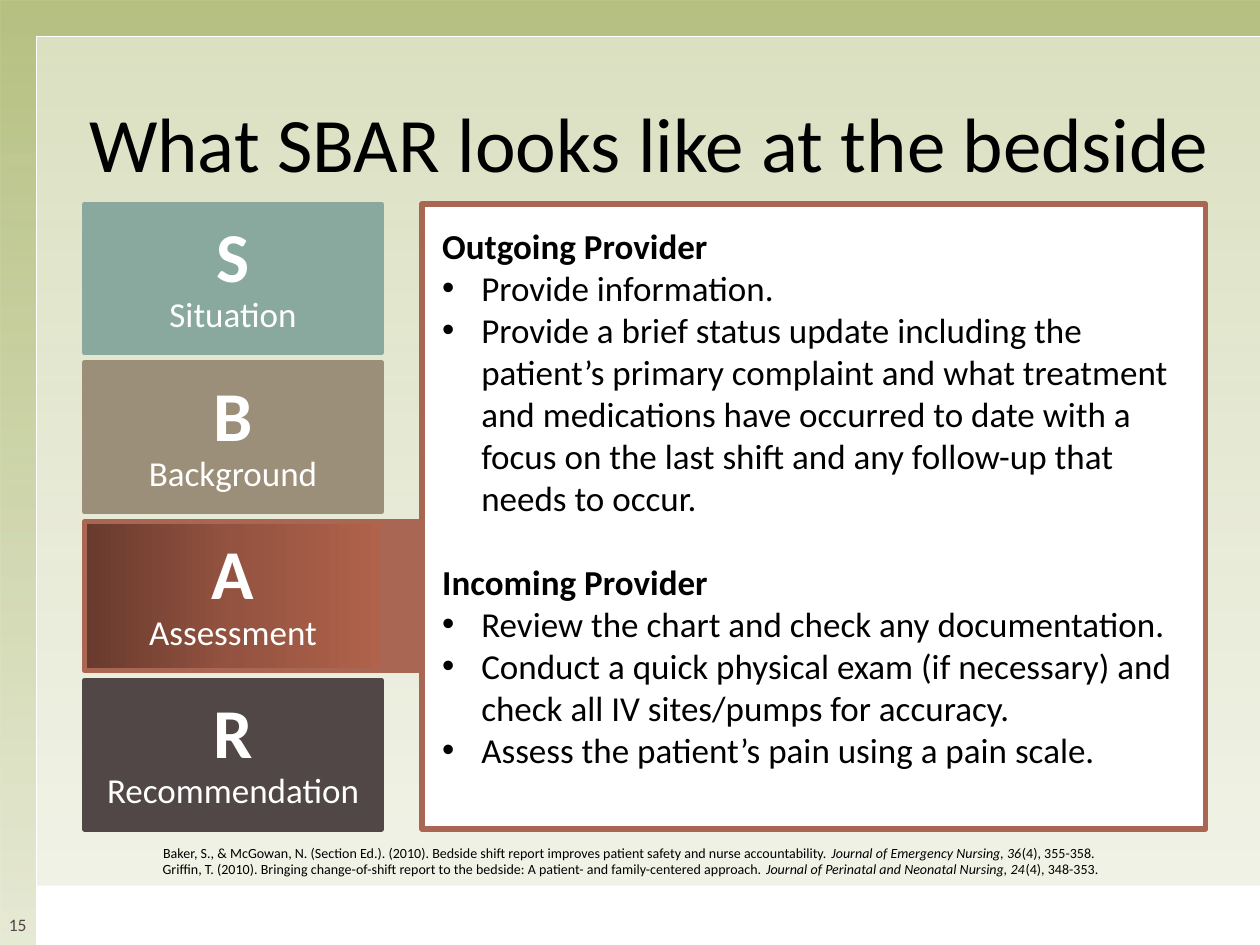
from lxml import etree
from pptx import Presentation
from pptx.dml.color import RGBColor
from pptx.enum.shapes import MSO_SHAPE
from pptx.enum.text import MSO_ANCHOR, PP_ALIGN
from pptx.oxml.ns import qn
from pptx.util import Inches, Pt

RECT = MSO_SHAPE.RECTANGLE
TOP, MIDDLE, BOTTOM = MSO_ANCHOR.TOP, MSO_ANCHOR.MIDDLE, MSO_ANCHOR.BOTTOM
LEFT, CENTER = PP_ALIGN.LEFT, PP_ALIGN.CENTER

COLORS = {
    "black": "000000",
    "white": "FFFFFF",
    "olive": "9EAC58",
    "teal": "89A99E",
    "taupe": "9B8F79",
    "rust": "A96652",
    "rust_dark": "683A2D",
    "rust_mid": "945340",
    "rust_light": "B0624B",
    "brown": "514746",
}


def rgb(name):
    return RGBColor.from_string(COLORS[name])


def add_alpha(clr, percent):
    etree.SubElement(clr, qn("a:alpha"), val=str(percent * 1000))


def write(tf, text, *, size=20, color="black", bold=False, italic=False,
          align=LEFT, bullet=False, before=0, spacing=None, same_line=False):
    """Add text as a new paragraph, or as a further run of the last one."""
    p = tf.paragraphs[-1]
    if not same_line:
        if p.runs:
            p = tf.add_paragraph()
        p.alignment = align
        if spacing:
            p.line_spacing = spacing
        if before:
            p.space_before = Pt(before)
        if bullet:
            pPr = p._p.get_or_add_pPr()
            pPr.set("marL", str(Inches(0.31)))
            pPr.set("indent", str(-Inches(0.31)))
            etree.SubElement(pPr, qn("a:buFont"), typeface="Arial")
            etree.SubElement(pPr, qn("a:buChar"), char="•")
    r = p.add_run()
    r.text = text
    r.font.name = "Calibri"
    r.font.size = Pt(size)
    r.font.bold = bold
    r.font.italic = italic
    r.font.color.rgb = rgb(color)


class SlideBuilder:
    def __init__(self, slide):
        self.slide = slide

    def frame(self, shape, anchor, insets, wrap=True):
        tf = shape.text_frame
        tf.word_wrap = wrap
        tf.vertical_anchor = anchor
        (tf.margin_left, tf.margin_top,
         tf.margin_right, tf.margin_bottom) = map(Inches, insets)
        return tf

    def rect(self, box, fill, line=None, width=3, alpha=None,
             anchor=MIDDLE, insets=(0.1, 0.05, 0.1, 0.05)):
        s = self.slide.shapes.add_shape(RECT, *map(Inches, box))
        s.shadow.inherit = False
        s.fill.solid()
        s.fill.fore_color.rgb = rgb(fill)
        if alpha:
            add_alpha(s._element.spPr.find(".//" + qn("a:srgbClr")), alpha)
        if line:
            s.line.color.rgb = rgb(line)
            s.line.width = Pt(width)
        else:
            s.line.fill.background()
        self.frame(s, anchor, insets)
        return s

    def gradient(self, s, stops, angle):
        """Fill with (position, color, alpha) stops."""
        s.fill.gradient()
        s.fill.gradient_angle = angle
        stop_list = s._element.spPr.find(".//" + qn("a:gsLst"))
        for old in list(stop_list):
            stop_list.remove(old)
        for pos, color, alpha in stops:
            gs = etree.SubElement(stop_list, qn("a:gs"), pos=str(pos * 1000))
            clr = etree.SubElement(gs, qn("a:srgbClr"), val=COLORS[color])
            if alpha < 100:
                add_alpha(clr, alpha)

    def text(self, box, anchor=TOP, insets=(0.1, 0.05, 0.1, 0.05), wrap=True):
        s = self.slide.shapes.add_textbox(*map(Inches, box))
        return self.frame(s, anchor, insets, wrap)

    def card(self, box, letter, word, color):
        s = self.rect(box, color, color)
        for text, size, bold in ((letter, 40, True), (word, 20, False)):
            write(s.text_frame, text, size=size, bold=bold, color="white",
                  align=CENTER, spacing=0.9)
        return s


def main():
    prs = Presentation()
    prs.slide_width, prs.slide_height = Inches(10), Inches(7.5)
    b = SlideBuilder(prs.slides.add_slide(prs.slide_layouts[6]))

    # Backdrop: olive wash, translucent panel, white foot
    wash = b.rect((0, 0, 10, 7.5), "olive")
    b.gradient(wash, [(0, "olive", 75), (50, "olive", 50),
                      (100, "olive", 25)], 270)
    b.rect((0.29, 0.29, 9.72, 7.2), "white", "white", width=1, alpha=50)
    b.rect((0.29, 7.03, 9.72, 0.47), "white")

    # Slide number
    tf = b.text((0, 7.03, 0.28, 0.47), BOTTOM, (0, 0.04, 0, 0.08))
    write(tf, "15", size=10, color="brown", align=CENTER)

    # Title
    tf = b.text((0.58, 0.5, 9.15, 1.25), MIDDLE)
    write(tf, "What SBAR looks like at the bedside", size=44, align=CENTER)

    # SBAR cards, with the Assessment card tied to the panel
    card_left, card_top, card_w, card_h, pitch = 0.67, 1.62, 2.36, 1.18, 1.26
    b.rect((card_left + card_w, card_top + 2 * pitch, 0.39, card_h),
           "rust", "rust")
    cards = [("S", "Situation", "teal"), ("B", "Background", "taupe"),
             ("A", "Assessment", "rust"), ("R", "Recommendation", "brown")]
    for i, (letter, word, color) in enumerate(cards):
        s = b.card((card_left, card_top + i * pitch, card_w, card_h),
                   letter, word, color)
        if letter == "A":
            b.gradient(s, [(0, "rust_dark", 100), (50, "rust_mid", 100),
                           (100, "rust_light", 100)], 0)

    # Detail panel
    panel = b.rect((3.35, card_top, 6.22, 3 * pitch + card_h), "white", "rust",
                   anchor=TOP, insets=(0.16,) * 4)
    sections = [
        ("Outgoing Provider", [
            "Provide information.",
            "Provide a brief status update including the patient’s primary "
            "complaint and what treatment and medications have occurred to "
            "date with a focus on the last shift and any follow-up that "
            "needs to occur."]),
        ("Incoming Provider", [
            "Review the chart and check any documentation.",
            "Conduct a quick physical exam (if necessary) and check all IV "
            "sites/pumps for accuracy.",
            "Assess the patient’s pain using a pain scale."]),
    ]
    for i, (heading, points) in enumerate(sections):
        write(panel.text_frame, heading, bold=True, before=24 * i)
        for point in points:
            write(panel.text_frame, point, bullet=True)

    # References
    tf = b.text((1.15, 6.65, 7.71, 0.37), wrap=False)
    references = [
        ("Baker, S., & McGowan, N. (Section Ed.). (2010). Bedside shift report "
         "improves patient safety and nurse accountability. ",
         "Journal of Emergency Nursing, 36", "(4), 355-358. "),
        ("Griffin, T. (2010). Bringing change-of-shift report to the bedside: "
         "A patient- and family-centered approach. ",
         "Journal of Perinatal and Neonatal Nursing, 24", "(4), 348-353."),
    ]
    for article, journal, pages in references:
        write(tf, article, size=8, align=CENTER)
        write(tf, journal, size=8, italic=True, same_line=True)
        write(tf, pages, size=8, same_line=True)

    prs.save("out.pptx")


if __name__ == "__main__":
    main()
